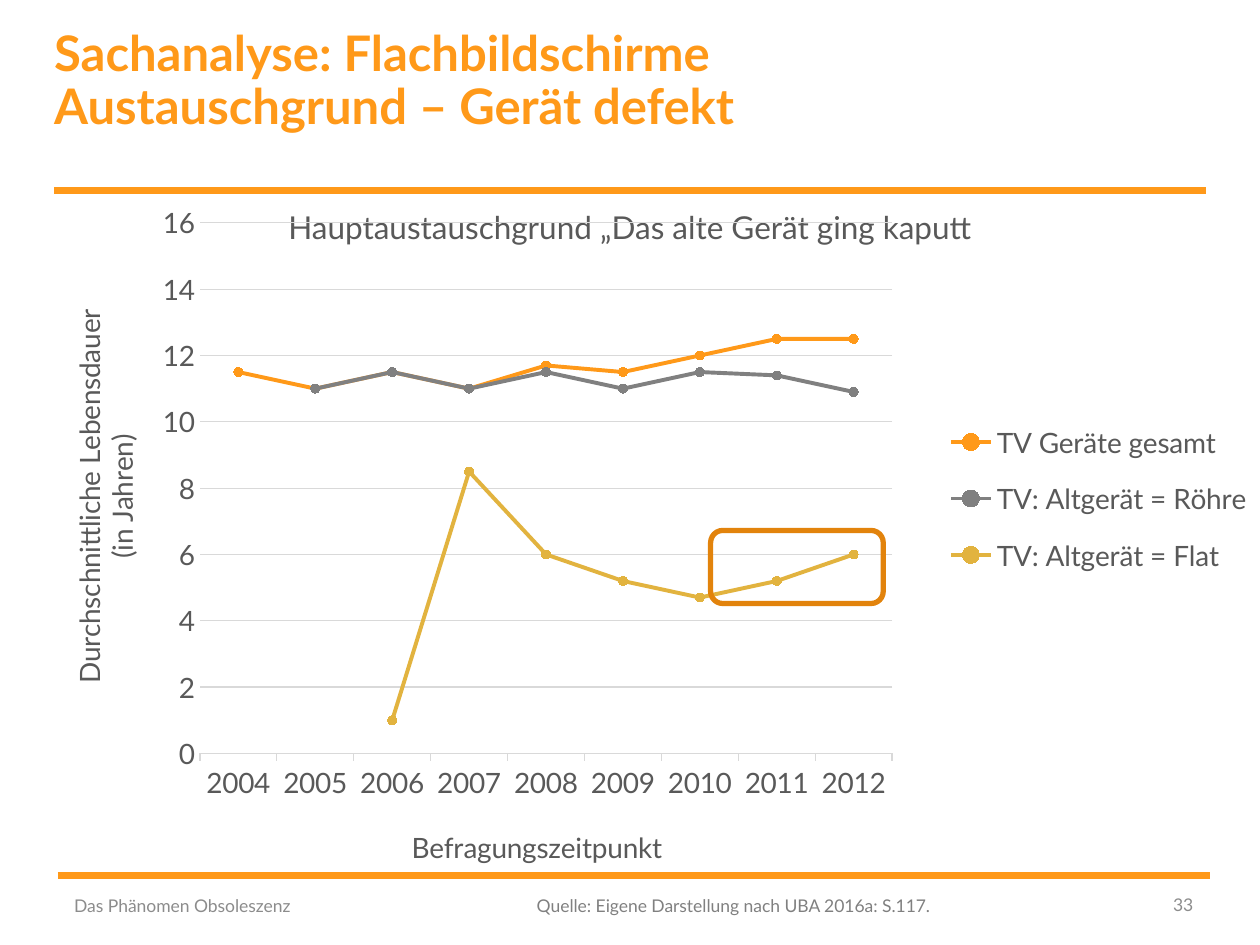
import lxml.etree
import pptx
import pptx.chart.data
import pptx.dml.color
import pptx.enum.chart
import pptx.enum.shapes
import pptx.enum.text
import pptx.oxml.ns
import pptx.util
from dataclasses import dataclass

Inches = pptx.util.Inches
Pt = pptx.util.Pt
qn = pptx.oxml.ns.qn
Align = pptx.enum.text.PP_ALIGN
Anchor = pptx.enum.text.MSO_ANCHOR


@dataclass(frozen=True)
class Theme:
    font: str = "Lato"
    accent: str = "FF9919"
    highlight: str = "E2830C"
    gold: str = "E2B33F"
    grey: str = "808080"
    footer: str = "8C8C8C"
    text: str = "595959"
    grid: str = "D9D9D9"
    title_size: int = 28
    heading_size: int = 18
    chart_size: int = 16
    small_size: int = 10


def rgb(color):
    return pptx.dml.color.RGBColor.from_string(color)


def place_in_chart(element, **settings):
    """Give a chart part a manual layout in fractions of the chart."""
    layout = element.find(qn("c:layout"))
    if layout is None:
        layout = lxml.etree.Element(qn("c:layout"))
        overlay = element.find(qn("c:overlay"))
        if overlay is None:
            element.insert(0, layout)
        else:
            overlay.addprevious(layout)
    for child in list(layout):
        layout.remove(child)
    manual = lxml.etree.SubElement(layout, qn("c:manualLayout"))
    for tag in ("layoutTarget", "xMode", "yMode", "x", "y", "w", "h"):
        value = "edge" if tag.endswith("Mode") else settings.get(tag)
        if value is not None:
            lxml.etree.SubElement(manual, qn(f"c:{tag}")).set("val", str(value))


class SlideBuilder:
    def __init__(self, slide, theme):
        self.slide = slide
        self.theme = theme

    def style_font(self, font, size, color, bold=False):
        font.name = self.theme.font
        font.size = Pt(size)
        font.bold = bold
        font.color.rgb = rgb(color)

    def set_text(self, box, text, size, color, align=Align.LEFT, anchor=Anchor.TOP, bold=False, inset=0):
        frame = box.text_frame
        frame.word_wrap = True
        frame.auto_size = pptx.enum.text.MSO_AUTO_SIZE.NONE
        frame.vertical_anchor = anchor
        frame.margin_left = frame.margin_right = Inches(inset)
        frame.margin_top = frame.margin_bottom = Inches(inset / 2)
        frame.text = text
        paragraph = frame.paragraphs[0]
        paragraph.alignment = align
        paragraph.space_before = Pt(0)
        if box.is_placeholder:
            properties = paragraph._p.get_or_add_pPr()
            properties.set("marL", "0")
            properties.set("indent", "0")
            lxml.etree.SubElement(properties, qn("a:buNone"))
        self.style_font(paragraph.font, size, color, bold)
        return paragraph

    def placeholder(self, index, bounds, text, size, color, **style):
        box = self.slide.placeholders[index]
        box.left, box.top, box.width, box.height = map(Inches, bounds)
        return self.set_text(box, text, size, color, **style)

    def label(self, bounds, text, align=Align.LEFT):
        box = self.slide.shapes.add_textbox(*map(Inches, bounds))
        self.set_text(box, text, self.theme.small_size, self.theme.footer, align, Anchor.MIDDLE, inset=0.1)

    def rule(self, left, y, width):
        line = self.slide.shapes.add_connector(
            pptx.enum.shapes.MSO_CONNECTOR.STRAIGHT,
            Inches(left), Inches(y), Inches(left + width), Inches(y))
        line.line.color.rgb = rgb(self.theme.accent)
        line.line.width = Pt(4)
        lxml.etree.SubElement(line._element.spPr, qn("a:effectLst"))

    def highlight_frame(self, bounds):
        frame = self.slide.shapes.add_shape(
            pptx.enum.shapes.MSO_SHAPE.ROUNDED_RECTANGLE, *map(Inches, bounds))
        frame.shadow.inherit = False
        frame.fill.background()
        frame.line.color.rgb = rgb(self.theme.highlight)
        frame.line.width = Pt(3)

    def axis_title(self, axis, text, x, y):
        frame = axis.axis_title.text_frame
        frame.text = text
        for paragraph in frame.paragraphs:
            self.style_font(paragraph.font, self.theme.chart_size, self.theme.text)
        place_in_chart(axis.axis_title._element, x=x, y=y)

    def line_chart(self, bounds, years, lifetimes):
        """Draw lifetimes, a list of (name, colour, values), over the years."""
        theme = self.theme
        data = pptx.chart.data.CategoryChartData()
        data.categories = years
        for name, _, values in lifetimes:
            data.add_series(name, values)
        chart = self.slide.shapes.add_chart(
            pptx.enum.chart.XL_CHART_TYPE.LINE_MARKERS, *map(Inches, bounds), data).chart
        chart.has_title = False
        self.style_font(chart.font, theme.chart_size, theme.text)
        plot = chart.plots[0]
        plot.vary_by_categories = False
        for series, (_, color, _) in zip(plot.series, lifetimes):
            series.smooth = False
            series.format.line.color.rgb = rgb(color)
            series.format.line.width = Pt(2.25)
            marker = series.marker
            marker.style = pptx.enum.chart.XL_MARKER_STYLE.CIRCLE
            marker.size = 5
            marker.format.fill.solid()
            marker.format.fill.fore_color.rgb = rgb(color)
            marker.format.line.color.rgb = rgb(color)

        time_axis, life_axis = chart.category_axis, chart.value_axis
        life_axis.minimum_scale, life_axis.maximum_scale, life_axis.major_unit = 0, 16, 2
        life_axis.major_tick_mark = pptx.enum.chart.XL_TICK_MARK.NONE
        life_axis.format.line.fill.background()
        time_axis.major_tick_mark = pptx.enum.chart.XL_TICK_MARK.OUTSIDE
        for line in (time_axis.format.line, life_axis.major_gridlines.format.line):
            line.color.rgb = rgb(theme.grid)
            line.width = Pt(0.75)
        for axis in (time_axis, life_axis):
            self.style_font(axis.tick_labels.font, theme.chart_size, theme.text)
        self.axis_title(time_axis, "Befragungszeitpunkt", 0.29, 0.91)
        self.axis_title(life_axis, "Durchschnittliche Lebensdauer\n(in Jahren)", 0.01, 0.16)

        chart.has_legend = True
        chart.legend.position = pptx.enum.chart.XL_LEGEND_POSITION.RIGHT
        chart.legend.include_in_layout = False
        self.style_font(chart.legend.font, theme.chart_size, theme.text)
        place_in_chart(chart.legend._element, x=0.72, y=0.3, w=0.28, h=0.28)
        place_in_chart(chart._chartSpace.chart.plotArea,
                       layoutTarget="inner", x=0.12, y=0.04, w=0.57, h=0.77)


def main():
    theme = Theme()
    deck = pptx.Presentation()
    deck.slide_width, deck.slide_height = Inches(10), Inches(7.5)
    two_content = deck.slide_layouts[3]
    page = SlideBuilder(deck.slides.add_slide(two_content), theme)

    page.rule(0.43, 1.51, 9.14)
    page.rule(0.46, 6.95, 9.14)
    page.line_chart((0.43, 1.55, 9.64, 5.47), [str(year) for year in range(2004, 2013)], [
        ("TV Geräte gesamt", theme.accent, [11.5, 11, 11.5, 11, 11.7, 11.5, 12, 12.5, 12.5]),
        ("TV: Altgerät = Röhre", theme.grey, [None, 11, 11.5, 11, 11.5, 11, 11.5, 11.4, 10.9]),
        ("TV: Altgerät = Flat", theme.gold, [None, None, 1, 8.5, 6, 5.2, 4.7, 5.2, 6]),
    ])
    title = page.placeholder(
        0, (0.43, 0.23, 6.69, 1.17), "Sachanalyse: Flachbildschirme\vAustauschgrund – Gerät defekt",
        theme.title_size, theme.accent, bold=True)
    title.line_spacing = 0.9
    page.placeholder(1, (0.43, 1.65, 9.14, 5.12), "Hauptaustauschgrund „Das alte Gerät ging kaputt",
                     theme.heading_size, theme.text, align=Align.CENTER)
    page.placeholder(2, (4.26, 6.99, 3.67, 0.4), "Quelle: Eigene Darstellung nach UBA 2016a: S.117.",
                     theme.small_size, theme.grey, anchor=Anchor.MIDDLE)
    page.label((0.49, 6.99, 3.38, 0.4), "Das Phänomen Obsoleszenz")
    page.label((8.97, 6.98, 0.6, 0.4), "33", Align.RIGHT)
    page.highlight_frame((5.64, 4.21, 1.37, 0.58))
    deck.save("out.pptx")


if __name__ == "__main__":
    main()
